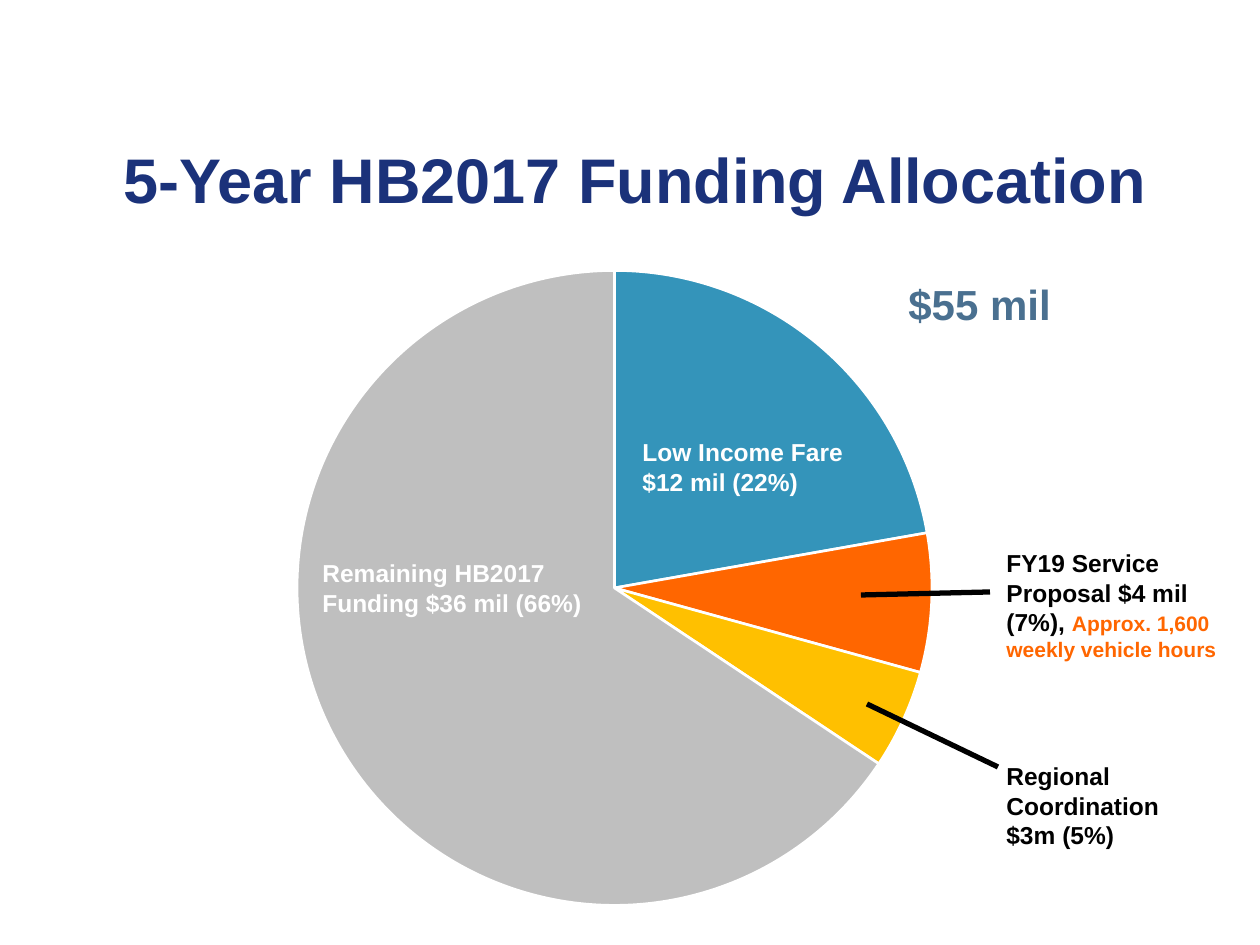
from dataclasses import dataclass

import lxml.etree
import pptx
import pptx.chart.data
import pptx.dml.color
import pptx.enum.chart
import pptx.enum.shapes
import pptx.enum.text
import pptx.oxml
import pptx.oxml.ns
import pptx.util

PX_PER_INCH = 126


@dataclass(frozen=True)
class Theme:
    font: str = "Arial"
    navy: str = "1B327A"
    slate: str = "4A7090"
    blue: str = "3494BA"
    orange: str = "FF6600"
    yellow: str = "FFC000"
    gray: str = "BFBFBF"
    white: str = "FFFFFF"
    black: str = "000000"
    title: int = 36
    total: int = 24
    label: int = 14
    note: int = 12
    chart: int = 10
    leader: int = 3
    slice_border: float = 1.5


THEME = Theme()


@dataclass(frozen=True)
class Span:
    text: str
    color: str
    size: int = THEME.label


@dataclass(frozen=True)
class Label:
    left: int
    top: int
    width: int
    height: int
    paragraphs: tuple[tuple[Span, ...], ...]
    wrap: bool = True
    centered: bool = False


@dataclass(frozen=True)
class Leader:
    x1: int
    y1: int
    x2: int
    y2: int


@dataclass(frozen=True)
class Slice:
    category: str
    value: int
    color: str


@dataclass(frozen=True)
class Pie:
    left: int
    top: int
    width: int
    height: int
    diameter: int
    slices: tuple[Slice, ...]


def lines(color: str, *texts: str) -> tuple[tuple[Span, ...], ...]:
    return tuple((Span(text, color),) for text in texts)


PIE = Pie(32, 252, 1165, 672, 635, (
    Slice("1", 22, THEME.blue),
    Slice("2", 7, THEME.orange),
    Slice("3", 5, THEME.yellow),
    Slice("4", 65, THEME.gray),
))

LABELS = (
    Label(5, 126, 1260, 105,
          ((Span("5-Year HB2017 Funding Allocation", THEME.navy, THEME.title),),),
          centered=True),
    Label(630, 431, 247, 72, lines(THEME.white, "Low Income Fare", "$12 mil (22%)")),
    Label(994, 542, 248, 127, (
        (Span("FY19 Service", THEME.black),),
        (Span("Proposal $4 mil (7%), ", THEME.black),
         Span("Approx. 1,600 weekly vehicle hours", THEME.orange, THEME.note)),
    )),
    Label(310, 552, 305, 72,
          lines(THEME.white, "Remaining HB2017 Funding $36 mil (66%)")),
    Label(994, 755, 179, 102,
          lines(THEME.black, "Regional", "Coordination", "$3m (5%)"), wrap=False),
    Label(896, 272, 169, 63,
          ((Span("$55 mil", THEME.slate, THEME.total),),), wrap=False),
)

LEADERS = (Leader(867, 704, 998, 767), Leader(861, 595, 990, 592))


def px(length: int) -> pptx.util.Emu:
    return pptx.util.Emu(round(length * 914400 / PX_PER_INCH))


def rgb(color: str) -> pptx.dml.color.RGBColor:
    return pptx.dml.color.RGBColor.from_string(color)


def set_plot_layout(chart: pptx.chart.chart.Chart, pie: Pie) -> None:
    width, height = pie.diameter / pie.width, pie.diameter / pie.height
    values = {"x": (1 - width) / 2, "y": (1 - height) / 2, "w": width, "h": height}
    plot_area = chart.plots[0]._element.getparent()
    for old in plot_area.findall(pptx.oxml.ns.qn("c:layout")):
        plot_area.remove(old)
    layout = lxml.etree.Element(pptx.oxml.ns.qn("c:layout"))
    manual = lxml.etree.SubElement(layout, pptx.oxml.ns.qn("c:manualLayout"))
    settings = {"layoutTarget": "inner", "xMode": "edge", "yMode": "edge"}
    settings.update({key: f"{value:.4f}" for key, value in values.items()})
    for name, value in settings.items():
        lxml.etree.SubElement(manual, pptx.oxml.ns.qn(f"c:{name}"), val=value)
    plot_area.insert(0, layout)


def draw_pie(slide: pptx.slide.Slide, pie: Pie) -> None:
    data = pptx.chart.data.CategoryChartData()
    data.categories = [part.category for part in pie.slices]
    data.add_series("Series 1", [part.value for part in pie.slices])
    chart = slide.shapes.add_chart(
        pptx.enum.chart.XL_CHART_TYPE.PIE,
        px(pie.left), px(pie.top), px(pie.width), px(pie.height), data,
    ).chart
    chart.has_legend = False
    chart.has_title = False
    chart.font.name = THEME.font
    chart.font.size = pptx.util.Pt(THEME.chart)
    chart.font.color.rgb = rgb(THEME.black)
    plot = chart.plots[0]
    plot.vary_by_categories = True
    for index, part in enumerate(pie.slices):
        style = plot.series[0].points[index].format
        style.fill.solid()
        style.fill.fore_color.rgb = rgb(part.color)
        style.line.color.rgb = rgb(THEME.white)
        style.line.width = pptx.util.Pt(THEME.slice_border)
    set_plot_layout(chart, pie)


def draw_label(slide: pptx.slide.Slide, label: Label) -> None:
    box = slide.shapes.add_textbox(
        px(label.left), px(label.top), px(label.width), px(label.height))
    frame = box.text_frame
    frame.word_wrap = label.wrap
    if label.centered:
        frame.vertical_anchor = pptx.enum.text.MSO_ANCHOR.MIDDLE
    else:
        frame.auto_size = pptx.enum.text.MSO_AUTO_SIZE.SHAPE_TO_FIT_TEXT
    for index, spans in enumerate(label.paragraphs):
        para = frame.add_paragraph() if index else frame.paragraphs[0]
        if label.centered:
            para.alignment = pptx.enum.text.PP_ALIGN.CENTER
        for span in spans:
            run = para.add_run()
            run.text = span.text
            run.font.name = THEME.font
            run.font.size = pptx.util.Pt(span.size)
            run.font.bold = True
            run.font.color.rgb = rgb(span.color)


def draw_leader(slide: pptx.slide.Slide, leader: Leader) -> None:
    line = slide.shapes.add_connector(
        pptx.enum.shapes.MSO_CONNECTOR.STRAIGHT,
        px(leader.x1), px(leader.y1), px(leader.x2), px(leader.y2))
    line.line.color.rgb = rgb(THEME.black)
    line.line.width = pptx.util.Pt(THEME.leader)
    lxml.etree.SubElement(line._element.spPr, pptx.oxml.ns.qn("a:effectLst"))


def main() -> None:
    deck = pptx.Presentation()
    deck.slide_width, deck.slide_height = px(1260), px(945)
    slide = deck.slides.add_slide(deck.slide_layouts[6])
    draw_pie(slide, PIE)
    for label in LABELS:
        draw_label(slide, label)
    for leader in LEADERS:
        draw_leader(slide, leader)
    deck.save("out.pptx")


if __name__ == "__main__":
    main()
